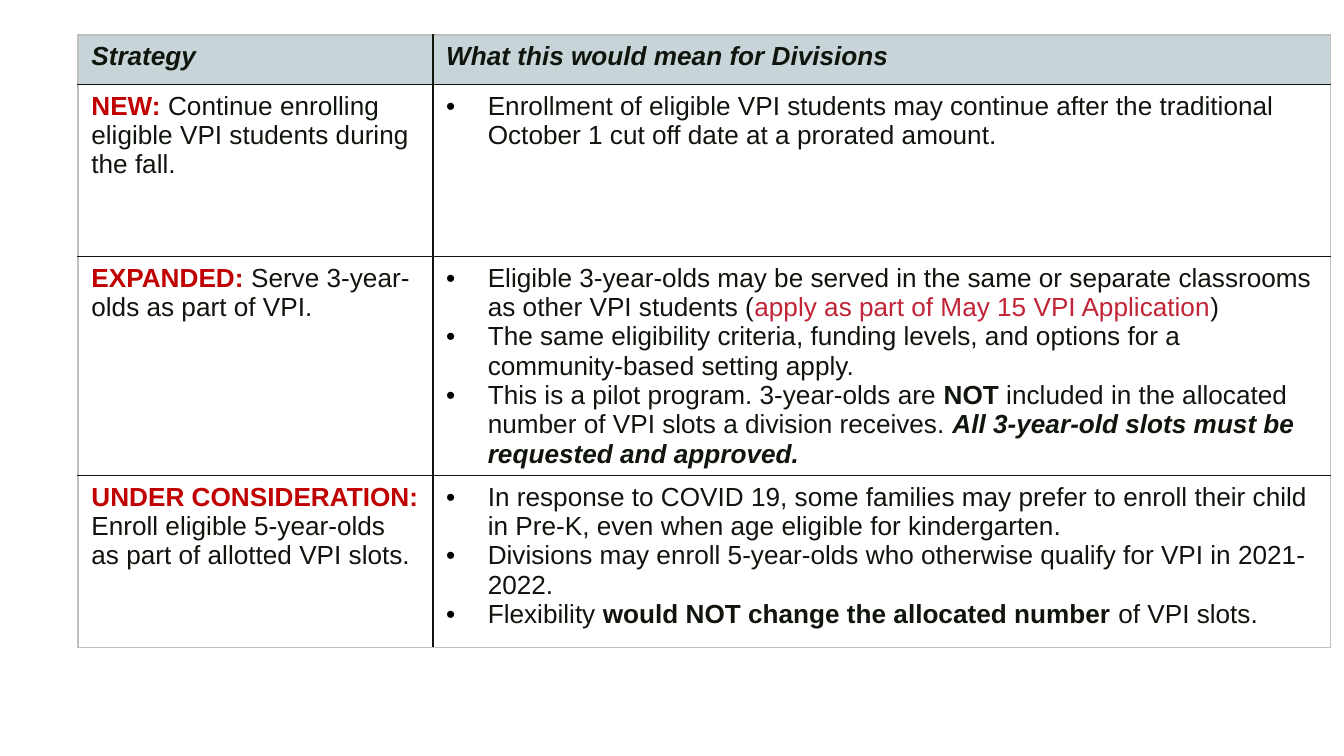
from lxml import etree
from pptx import Presentation
from pptx import util as u
from pptx.dml.color import RGBColor
from pptx.oxml.ns import qn

THEME = {
    "font": "Arial", "size": 14, "ink": "0F150D", "label": "C00000",
    "accent": "C12436", "bullet": "000000", "header": "C7D4D8",
    "body": "FFFFFF", "outer": "BFBFBF", "line": 1,
}

# Content: a span is (text, format); a paragraph is a list of spans
HEADERS = ["Strategy", "What this would mean for Divisions"]
STRATEGIES = [
    ("NEW: ", "Continue enrolling eligible VPI students during the fall.", [
        [("Enrollment of eligible VPI students may continue after the traditional "
          "October 1 cut off date at a prorated amount.", {})],
    ]),
    ("EXPANDED: ", "Serve 3-year-olds as part of VPI.", [
        [("Eligible 3-year-olds may be served in the same or separate classrooms "
          "as other VPI students (", {}),
         ("apply as part of May 15 VPI Application", {"color": "accent"}),
         (")", {})],
        [("The same eligibility criteria, funding levels, and options for a "
          "community-based setting apply.", {})],
        [("This is a pilot program. 3-year-olds are ", {}),
         ("NOT", {"bold": True}),
         (" included in the allocated number of VPI slots a division receives. ", {}),
         ("All 3-year-old slots must be requested and approved.",
          {"bold": True, "italic": True})],
    ]),
    ("UNDER CONSIDERATION: ",
     "Enroll eligible 5-year-olds as part of allotted VPI slots.", [
        [("In response to COVID 19, some families may prefer to enroll their child "
          "in Pre-K, even when age eligible for kindergarten.", {})],
        [("Divisions may enroll 5-year-olds who otherwise qualify for VPI in "
          "2021-2022.", {})],
        [("Flexibility ", {}),
         ("would NOT change the allocated number ", {"bold": True}),
         ("of VPI slots.", {})],
    ]),
]
SLIDE_WIDTH = 10
LEFT, TOP = 0.58, 0.26
COLUMNS = [2.64, 6.68]
ROWS = [0.37] + [1.28] * len(STRATEGIES)


def add_span(para, text, color="ink", bold=False, italic=False):
    span = para.add_run()
    span.text = text
    font = span.font
    font.name, font.size = THEME["font"], u.Pt(THEME["size"])
    font.bold, font.italic = bold, italic
    font.color.rgb = RGBColor.from_string(THEME[color])


def add_bullet(para):
    props = para._p.get_or_add_pPr()
    props.set("marL", str(u.Inches(0.31)))
    props.set("indent", str(-u.Inches(0.31)))
    color = etree.SubElement(props, qn("a:buClr"))
    etree.SubElement(color, qn("a:srgbClr"), val=THEME["bullet"])
    etree.SubElement(props, qn("a:buFont"), typeface=THEME["font"])
    etree.SubElement(props, qn("a:buChar"), char="•")


def fill_cell(cell, paragraphs, fill, bullets=False):
    cell.fill.solid()
    cell.fill.fore_color.rgb = RGBColor.from_string(THEME[fill])
    frame = cell.text_frame
    for index, spans in enumerate(paragraphs):
        para = frame.add_paragraph() if index else frame.paragraphs[0]
        if bullets:
            add_bullet(para)
        for text, style in spans:
            add_span(para, text, **style)


def set_borders(cell, row, column):
    outer_sides = {"lnL": column == 0, "lnR": column == len(COLUMNS) - 1,
                   "lnT": row == 0, "lnB": row == len(ROWS) - 1}
    props = cell._tc.get_or_add_tcPr()
    for index, (side, is_outer) in enumerate(outer_sides.items()):
        line = etree.Element(qn(f"a:{side}"), w=str(u.Pt(THEME["line"])))
        solid = etree.SubElement(line, qn("a:solidFill"))
        etree.SubElement(solid, qn("a:srgbClr"),
                         val=THEME["outer" if is_outer else "ink"])
        props.insert(index, line)


def main():
    # Widescreen 16:9 page
    deck = Presentation()
    deck.slide_width = u.Inches(SLIDE_WIDTH)
    deck.slide_height = u.Inches(SLIDE_WIDTH * 9 / 16)
    page = deck.slides.add_slide(deck.slide_layouts[6])

    # Table grid
    table = page.shapes.add_table(
        len(ROWS), len(COLUMNS), u.Inches(LEFT), u.Inches(TOP),
        u.Inches(sum(COLUMNS)), u.Inches(sum(ROWS))).table
    table.first_row = table.horz_banding = False
    for column, width in zip(table.columns, COLUMNS):
        column.width = u.Inches(width)
    for row, height in zip(table.rows, ROWS):
        row.height = u.Inches(height)

    # Header row
    for column, title in enumerate(HEADERS):
        fill_cell(table.cell(0, column),
                  [[(title, {"bold": True, "italic": True})]], "header")

    # Strategy rows
    for row, (label, summary, points) in enumerate(STRATEGIES, 1):
        fill_cell(table.cell(row, 0),
                  [[(label, {"color": "label", "bold": True}), (summary, {})]], "body")
        fill_cell(table.cell(row, 1), points, "body", bullets=True)

    # Borders
    for row in range(len(ROWS)):
        for column in range(len(COLUMNS)):
            set_borders(table.cell(row, column), row, column)

    deck.save("out.pptx")


if __name__ == "__main__":
    main()
